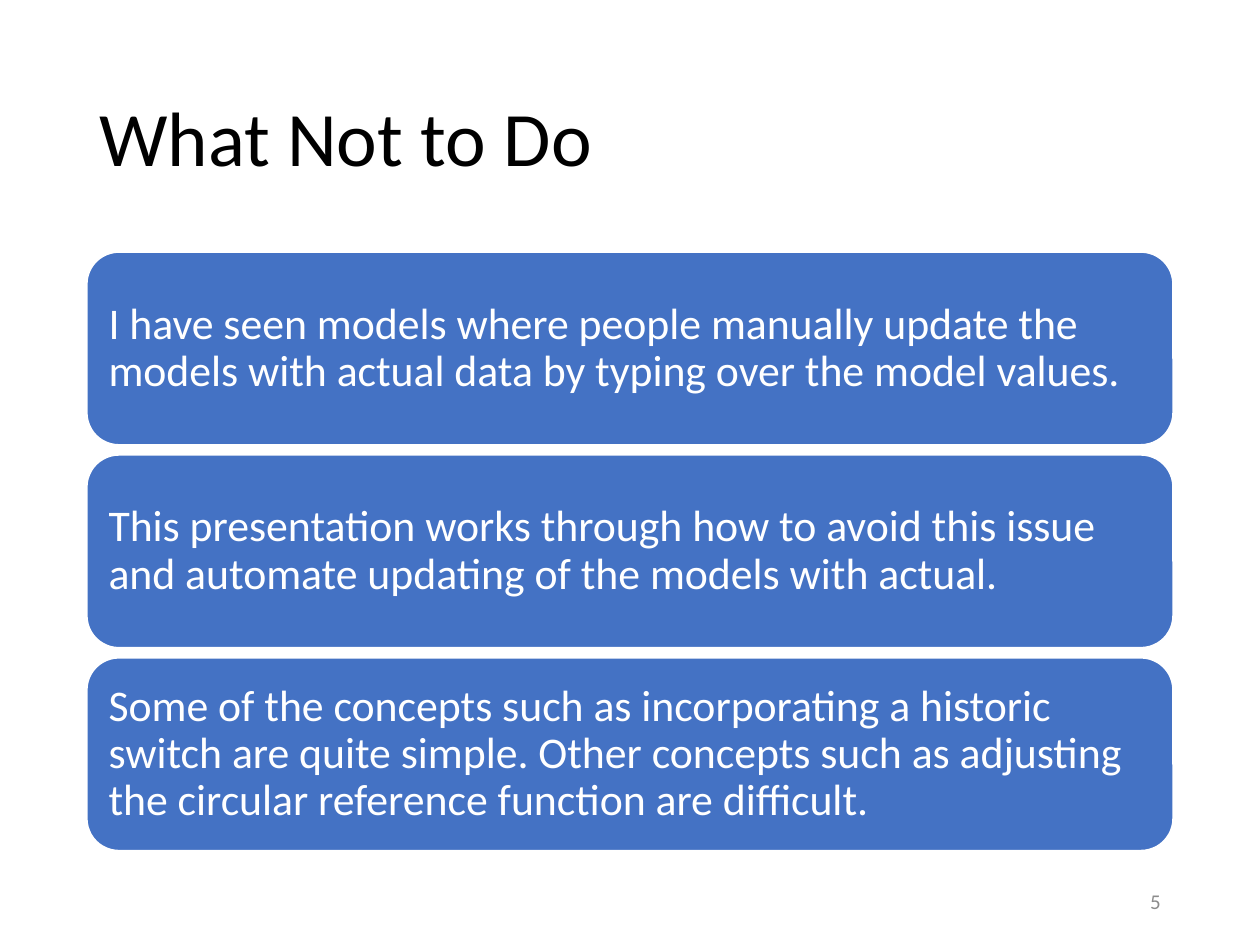
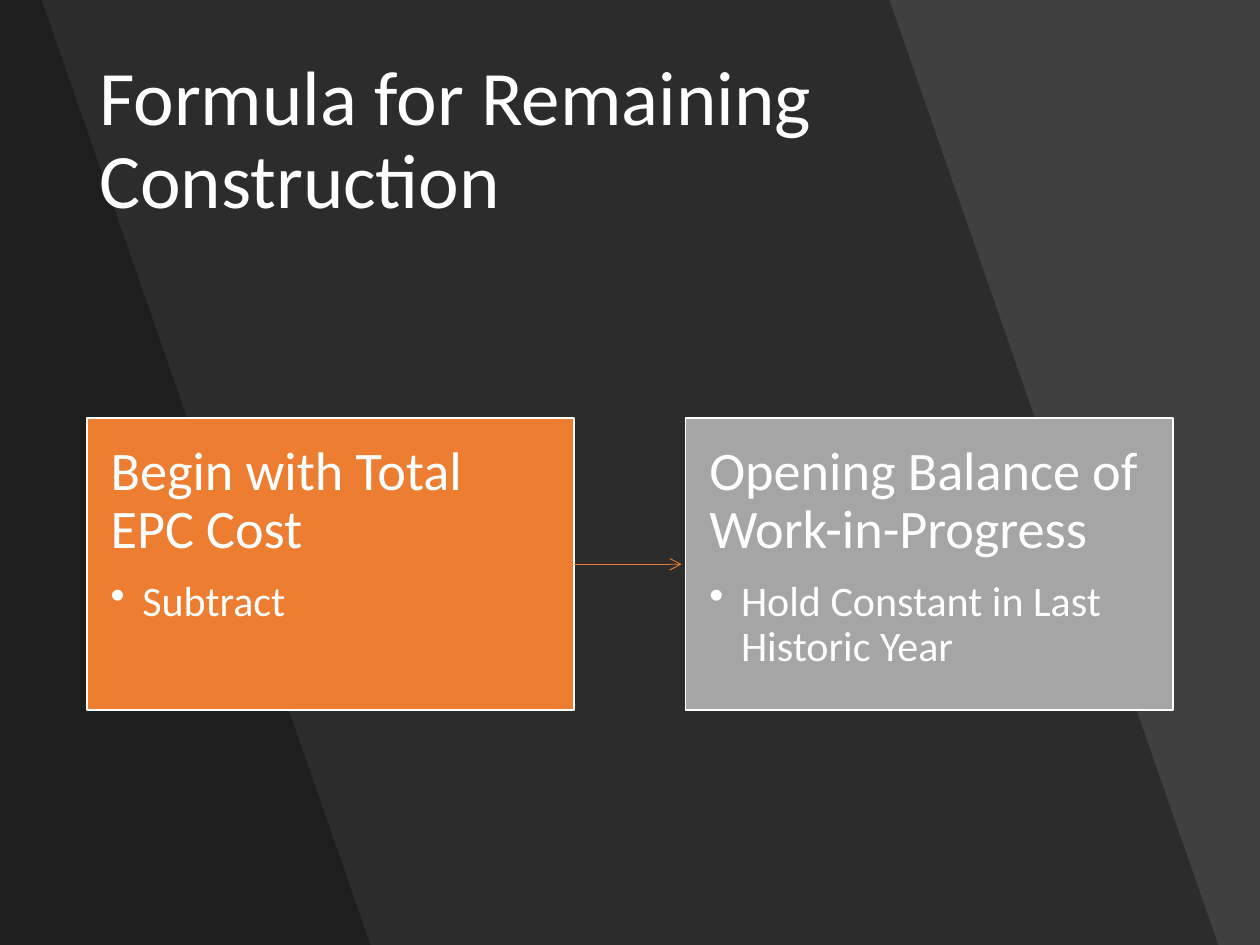
from pptx import Presentation
from pptx.dml.color import RGBColor
from pptx.enum.shapes import MSO_CONNECTOR as Connector, MSO_SHAPE as Shape
from pptx.enum.text import MSO_ANCHOR as Anchor, PP_ALIGN as Align
from pptx.oxml.ns import qn
from pptx.util import Cm, Pt
from lxml.etree import SubElement

WIDTH, HEIGHT = 25.4, 19.05
LEFT, CONTENT_WIDTH = 1.75, 21.9
BLACK, WHITE, GREY, CHARCOAL = "000000", "FFFFFF", "8C8C8C", "404040"
BLUE, ORANGE, SILVER = "4472C4", "ED7D31", "A5A5A5"


def colour(value):
    """Turn a hex string into a colour."""
    return RGBColor.from_string(value)


def style(target, values):
    """Set each attribute named in a dict of format values."""
    for name, value in values.items():
        setattr(target, name, value)


class Deck:
    """Hold the shared style and the current slide."""

    font = {"name": "Calibri"}
    spacing = {"line_spacing": 0.9}

    def __init__(self):
        """Start an empty presentation."""
        self.presentation = Presentation()
        style(self.presentation, {"slide_width": Cm(WIDTH), "slide_height": Cm(HEIGHT)})

    def add_slide(self, background):
        """Add a blank slide with a plain background."""
        self.slide = self.presentation.slides.add_slide(self.presentation.slide_layouts[6])
        self.paint(self.slide.background.fill, background)

    def paint(self, fill, value):
        """Give a fill one solid colour."""
        fill.solid()
        fill.fore_color.rgb = colour(value)

    def frame(self, shape, anchor, horizontal=0.25, vertical=0.13):
        """Set wrapping, anchor and insets of a shape's text."""
        style(shape.text_frame, {
            "word_wrap": True, "vertical_anchor": anchor,
            "margin_left": Cm(horizontal), "margin_right": Cm(horizontal),
            "margin_top": Cm(vertical), "margin_bottom": Cm(vertical)})
        return shape.text_frame

    def fill_paragraph(self, paragraph, text, size, value, bullet=False, **format_values):
        """Fill a paragraph with one styled run."""
        if bullet:
            properties = paragraph._p.get_or_add_pPr()
            properties.set("marL", str(Cm(0.64)))
            properties.set("indent", str(-Cm(0.64)))
            SubElement(properties, qn("a:buChar")).set("char", "•")
        style(paragraph, {"alignment": Align.LEFT, **self.spacing, **format_values})
        run = paragraph.add_run()
        run.text = text
        style(run.font, {**self.font, "size": Pt(size)})
        run.font.color.rgb = colour(value)

    def text(self, text, left, top, width, height, size, value, **format_values):
        """Add a text box with one paragraph."""
        shape = self.slide.shapes.add_textbox(Cm(left), Cm(top), Cm(width), Cm(height))
        frame = self.frame(shape, Anchor.MIDDLE)
        self.fill_paragraph(frame.paragraphs[0], text, size, value, **format_values)

    def title(self, text, value):
        """Add the slide title."""
        self.text(text, LEFT, 1.02, CONTENT_WIDTH, 3.68, 44, value)

    def page_number(self, number):
        """Add the slide number at the lower right."""
        self.text(number, 17.93, 17.65, 5.72, 1.02, 12, GREY,
                  alignment=Align.RIGHT, line_spacing=1.0)

    def box(self, kind, left, top, width, height, fill):
        """Add a filled preset shape with a thin white outline."""
        shape = self.slide.shapes.add_shape(kind, Cm(left), Cm(top), Cm(width), Cm(height))
        shape.shadow.inherit = False
        self.paint(shape.fill, fill)
        self.paint(shape.line.fill, WHITE)
        shape.line.width = Pt(1)
        return shape

    def statement(self, text, top, height):
        """Add a rounded full-width statement."""
        shape = self.box(Shape.ROUNDED_RECTANGLE, LEFT, top, CONTENT_WIDTH, height, BLUE)
        frame = self.frame(shape, Anchor.MIDDLE, 0.25, 0.25)
        self.fill_paragraph(frame.paragraphs[0], text, 25, WHITE)

    def card(self, heading, detail, left, width, fill):
        """Add a card with a heading and one bullet."""
        shape = self.box(Shape.RECTANGLE, left, 8.43, width, 5.89, fill)
        frame = self.frame(shape, Anchor.TOP, 0.48, 0.51)
        self.fill_paragraph(frame.paragraphs[0], heading, 31, WHITE, space_after=Pt(11))
        self.fill_paragraph(frame.add_paragraph(), detail, 24, WHITE, bullet=True)
        return shape

    def arrow(self, start, end, gap):
        """Draw an arrow from one card to just short of the next."""
        middle = start.top + start.height // 2
        connector = self.slide.shapes.add_connector(
            Connector.STRAIGHT, start.left + start.width, middle, end.left - Cm(gap), middle)
        connector.begin_connect(start, 3)
        self.paint(connector.line.fill, ORANGE)
        connector.line.width = Pt(0.5)
        properties = connector._element.spPr
        SubElement(properties.find(qn("a:ln")), qn("a:tailEnd")).set("type", "arrow")
        SubElement(properties, qn("a:effectLst"))

    def slanted_band(self, top_width, slant=6.63):
        """Shade the left of the slide up to a slanted edge."""
        builder = self.slide.shapes.build_freeform(0, 0)
        builder.add_line_segments([
            (Cm(top_width), 0), (Cm(top_width + slant), Cm(HEIGHT)), (0, Cm(HEIGHT))])
        shape = builder.convert_to_shape()
        shape.shadow.inherit = False
        self.paint(shape.fill, BLACK)
        shape.line.fill.background()
        tint = shape._element.spPr.find(qn("a:solidFill"))[0]
        SubElement(tint, qn("a:alpha")).set("val", "30000")


def what_not_to_do(deck):
    """Build the slide of three stacked statements."""
    deck.add_slide(WHITE)
    height, gap = 3.89, 0.2
    statements = [
        "I have seen models where people manually update the models with actual data "
        "by typing over the model values.",
        "This presentation works through how to avoid this issue and automate updating "
        "of the models with actual.",
        "Some of the concepts such as incorporating a historic switch are quite simple. "
        "Other concepts such as adjusting the circular reference function are difficult.",
    ]
    for index, statement in enumerate(statements):
        deck.statement(statement, 5.08 + index * (height + gap), height)
    deck.title("What Not to Do", BLACK)
    deck.page_number("5")


def remaining_construction(deck):
    """Build the dark slide with two linked cards."""
    deck.add_slide(CHARCOAL)
    for top_width in (17.93, 0.84):
        deck.slanted_band(top_width)
    width = 9.83
    cards = [
        ("Begin with Total EPC Cost", "Subtract", LEFT, ORANGE),
        ("Opening Balance of Work-in-Progress", "Hold Constant in Last Historic Year",
         LEFT + CONTENT_WIDTH - width, SILVER),
    ]
    start, end = [deck.card(heading, detail, left, width, fill)
                  for heading, detail, left, fill in cards]
    deck.arrow(start, end, 0.08)
    deck.title("Formula for Remaining Construction", WHITE)


def main():
    """Build both slides and save them."""
    deck = Deck()
    what_not_to_do(deck)
    remaining_construction(deck)
    deck.presentation.save("out.pptx")


if __name__ == "__main__":
    main()
